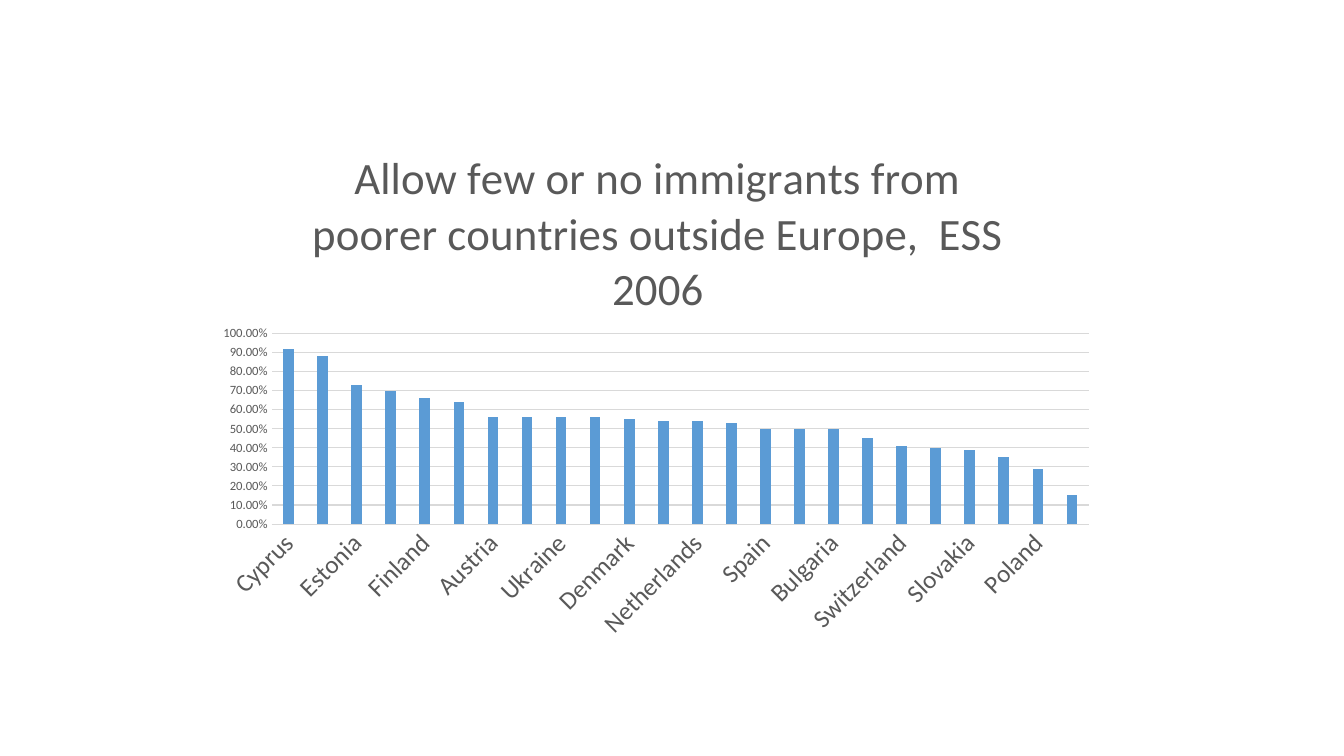
from dataclasses import dataclass
from typing import Any

from lxml import etree
from pptx import Presentation
from pptx.chart.data import CategoryChartData
from pptx.dml.color import RGBColor
from pptx.enum.chart import XL_CHART_TYPE, XL_TICK_MARK
from pptx.oxml.ns import qn
from pptx.util import Inches, Pt

COLUMN = XL_CHART_TYPE.COLUMN_CLUSTERED
NO_TICK = XL_TICK_MARK.NONE


@dataclass(frozen=True)
class Theme:
    face: str = "Calibri"
    ink: str = "595959"
    base: str = "000000"
    rule: str = "D9D9D9"
    bar: str = "5B9BD5"
    head: float = 32
    body: float = 10
    names: float = 18
    scale: float = 9
    line: float = 0.75


@dataclass(frozen=True)
class Share:
    x: float
    y: float
    w: float
    h: float


@dataclass(frozen=True)
class Rate:
    land: str
    value: float


THEME = Theme()
WIDE, HIGH = Inches(13.33), Inches(7.5)
FRAME = Share(2.07 / 13.33, 1.21 / 7.5, 8.91 / 13.33, 0.7)
PLOT = Share(0.07, 0.4, 0.91, 0.36)
HEAD = "Allow few or no immigrants from poorer countries outside Europe,  ESS 2006"
RATES = [
    Rate("Cyprus", 0.92), Rate("Hungary", 0.88), Rate("Estonia", 0.73),
    Rate("Russian Federation", 0.7), Rate("Finland", 0.66), Rate("Portugal", 0.64),
    Rate("Austria", 0.56), Rate("United Kingdom", 0.56), Rate("Ukraine", 0.56),
    Rate("Germany", 0.56), Rate("Denmark", 0.55), Rate("France", 0.54),
    Rate("Netherlands", 0.54), Rate("Total", 0.53), Rate("Spain", 0.5),
    Rate("Slovenia", 0.5), Rate("Bulgaria", 0.5), Rate("Belgium", 0.45),
    Rate("Switzerland", 0.41), Rate("Norway", 0.4), Rate("Slovakia", 0.39),
    Rate("Ireland", 0.35), Rate("Poland", 0.29), Rate("Sweden", 0.15),
]


def apply(item: Any, values: dict[str, Any]) -> None:
    for name, value in values.items():
        setattr(item, name, value)


def style(font: Any, size: float, tone: str = THEME.ink) -> None:
    apply(font, {"name": THEME.face, "size": Pt(size), "bold": False})
    font.color.rgb = RGBColor.from_string(tone)


def stroke(line: Any) -> None:
    line.width = Pt(THEME.line)
    line.color.rgb = RGBColor.from_string(THEME.rule)


def place(chart: Any, area: Share) -> None:
    plot = chart.element.find(".//" + qn("c:plotArea"))
    for old in plot.findall(qn("c:layout")):
        plot.remove(old)
    layout = etree.Element(qn("c:layout"))
    plot.insert(0, layout)
    manual = etree.SubElement(layout, qn("c:manualLayout"))
    marks = {"layoutTarget": "inner", "xMode": "edge", "yMode": "edge",
             "x": area.x, "y": area.y, "w": area.w, "h": area.h}
    for name, value in marks.items():
        etree.SubElement(manual, qn(f"c:{name}")).set("val", str(value))


def add_rates(slide: Any, frame: Share, rates: list[Rate]) -> Any:
    data = CategoryChartData(number_format="0.00%")
    data.categories = [rate.land for rate in rates]
    data.add_series("Series 1", [rate.value for rate in rates])
    return slide.shapes.add_chart(
        COLUMN, round(WIDE * frame.x), round(HIGH * frame.y),
        round(WIDE * frame.w), round(HIGH * frame.h), data).chart


def format_chart(chart: Any) -> None:
    style(chart.font, THEME.body, THEME.base)
    apply(chart, {"has_legend": False, "has_title": True})
    title = chart.chart_title
    title.include_in_layout = False
    text = title.text_frame
    text.text = HEAD
    style(text.paragraphs[0].runs[0].font, THEME.head)

    bars = chart.plots[0]
    apply(bars, {"gap_width": 219, "overlap": -27, "vary_by_categories": False})
    fill = bars.series[0].format.fill
    fill.solid()
    fill.fore_color.rgb = RGBColor.from_string(THEME.bar)

    lands, scale = chart.category_axis, chart.value_axis
    for axis, size in ((lands, THEME.names), (scale, THEME.scale)):
        apply(axis, {"major_tick_mark": NO_TICK, "minor_tick_mark": NO_TICK})
        style(axis.tick_labels.font, size)
    lands.has_major_gridlines = False
    stroke(lands.format.line)
    apply(scale, {"minimum_scale": 0, "maximum_scale": 1, "major_unit": 0.1,
                  "has_major_gridlines": True})
    apply(scale.tick_labels, {"number_format": "0.00%",
                              "number_format_is_linked": False})
    scale.format.line.fill.background()
    stroke(scale.major_gridlines.format.line)
    for body in chart.element.xpath(".//c:catAx/c:txPr/a:bodyPr"):
        body.set("rot", str(-45 * 60000))
    place(chart, PLOT)


def main() -> None:
    deck = Presentation()
    apply(deck, {"slide_width": WIDE, "slide_height": HIGH})
    slide = deck.slides.add_slide(deck.slide_layouts[6])
    format_chart(add_rates(slide, FRAME, RATES))
    deck.save("out.pptx")


if __name__ == "__main__":
    main()
